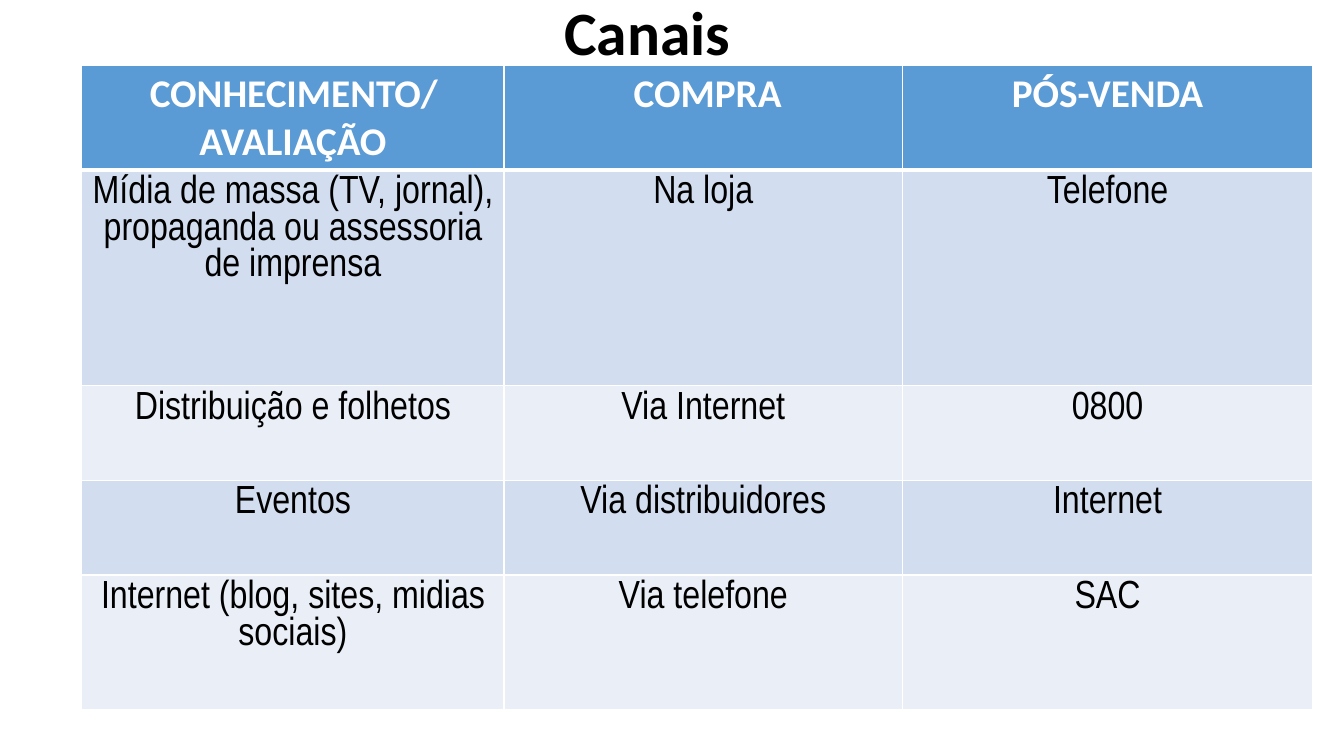
from lxml import etree
from pptx import Presentation
from pptx import util as u
from pptx.dml.color import RGBColor
from pptx.enum import text
from pptx.oxml import ns

COLORS = {"header": "5B9BD5", "odd": "D2DEEF", "even": "EAEFF7",
          "white": "FFFFFF", "black": "000000"}

COLUMN_WIDTHS = [4.19, 3.95, 4.07]
ROW_HEIGHTS = [0.94, 2.14, 0.94, 0.94, 1.34]
CHANNELS = [
    ["CONHECIMENTO/AVALIAÇÃO", " COMPRA", "PÓS-VENDA"],
    ["Mídia de massa (TV, jornal), propaganda ou assessoria de imprensa",
     "Na loja", "Telefone"],
    ["Distribuição e folhetos", "Via Internet", "0800"],
    ["Eventos", "Via distribuidores", "Internet"],
    ["Internet (blog, sites, midias sociais)", "Via telefone", "SAC"],
]


class SlideBuilder:
    def __init__(self, slide):
        self.slide = slide
        self.heading_font = "Calibri"
        self.body_font = "Arial Narrow"
        self.title_size = 44
        self.table_size = 28

    def add_words(self, frame, words, size, color, heading):
        paragraph = frame.paragraphs[0]
        paragraph.alignment = text.PP_ALIGN.CENTER
        run = paragraph.add_run()
        run.text = words
        run.font.name = self.heading_font if heading else self.body_font
        run.font.size = u.Pt(size)
        run.font.bold = heading
        run.font.color.rgb = RGBColor.from_string(COLORS[color])
        return paragraph

    def title(self, words, left, top, width, height):
        box = self.slide.shapes.add_textbox(*map(u.Inches, (left, top, width, height)))
        frame = box.text_frame
        frame.word_wrap = True
        frame.vertical_anchor = text.MSO_ANCHOR.MIDDLE
        self.add_words(frame, words, self.title_size, "black", True).line_spacing = 0.9

    def borders(self, cell, top_width, bottom_width):
        """Draw white lines around a cell, placed before its fill as the schema asks."""
        properties = cell._tc.get_or_add_tcPr()
        widths = {"lnL": 1, "lnR": 1, "lnT": top_width, "lnB": bottom_width}
        for position, (side, width) in enumerate(widths.items()):
            line = etree.Element(ns.qn(f"a:{side}"), w=str(u.Pt(width)))
            fill = etree.SubElement(line, ns.qn("a:solidFill"))
            etree.SubElement(fill, ns.qn("a:srgbClr"), val=COLORS["white"])
            properties.insert(position, line)

    def table(self, rows, left, top, widths, heights):
        frame = self.slide.shapes.add_table(
            len(rows), len(widths), u.Inches(left), u.Inches(top),
            u.Inches(sum(widths)), u.Inches(sum(heights)))
        table = frame.table
        for column, width in zip(table.columns, widths):
            column.width = u.Inches(width)
        for row, height in zip(table.rows, heights):
            row.height = u.Inches(height)
        for i, row in enumerate(rows):
            header = i == 0
            shade = "header" if header else "odd" if i % 2 else "even"
            for j, words in enumerate(row):
                cell = table.cell(i, j)
                cell.fill.solid()
                cell.fill.fore_color.rgb = RGBColor.from_string(COLORS[shade])
                # The thick rule under the header is shared with the first body row
                self.borders(cell, 3 if i == 1 else 1, 3 if header else 1)
                self.add_words(cell.text_frame, words, self.table_size,
                               "white" if header else "black", header)


def main():
    deck = Presentation()
    deck.slide_width, deck.slide_height = u.Inches(13.33), u.Inches(7.5)
    builder = SlideBuilder(deck.slides.add_slide(deck.slide_layouts[6]))
    builder.title("Canais", 1.67, -0.27, 9.5, 1.25)
    builder.table(CHANNELS, 0.81, 0.65, COLUMN_WIDTHS, ROW_HEIGHTS)
    deck.save("out.pptx")


if __name__ == "__main__":
    main()
